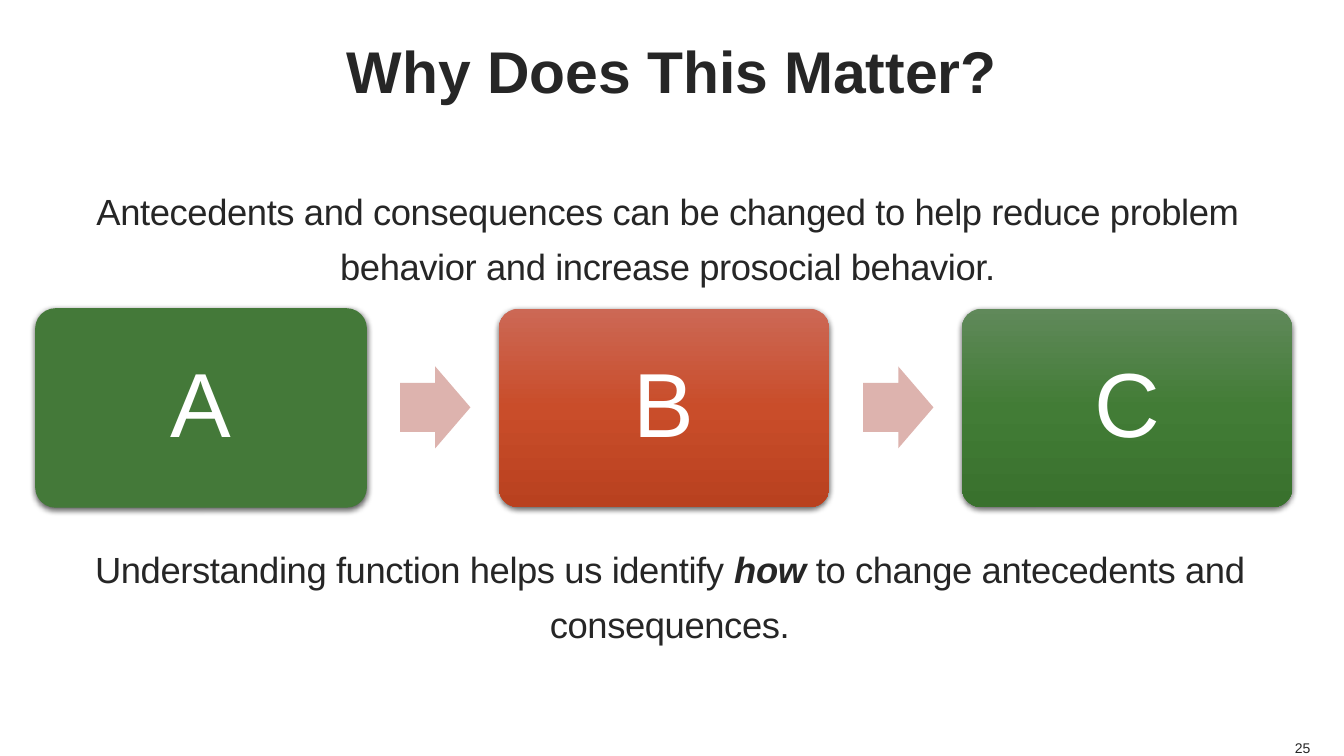
from lxml.etree import SubElement
from pptx import Presentation
from pptx.dml.color import RGBColor
from pptx.enum.dml import MSO_FILL
from pptx.enum.shapes import MSO_SHAPE
from pptx.enum.text import MSO_ANCHOR, MSO_AUTO_SIZE, PP_ALIGN
from pptx.oxml.ns import qn
from pptx.util import Emu, Pt

PX = 9525  # EMU per px, 96 px to the inch

THEME = {
    "font": "Arial",
    "ink": "262626",
    "white": "FFFFFF",
    "arrow": "DDB3AE",
    "shadow": "000000",
    "title": 42,
    "body": 26,
    "letter": 65,
    "number": 10,
}
CARDS = [
    ("A", ["447939"]),
    ("B", ["CC6855", "C94D2A", "B9411F"]),
    ("C", ["60895A", "427C36", "39712D"]),
]
CARD_LEFT, CARD_TOP, CARD_W, CARD_H, PITCH = 34, 294, 315, 189, 441
ARROW_W, ARROW_H = 67, 78


def box(left, top, width, height):
    """Turn a place in px into EMU."""
    return [Emu(v * PX) for v in (left, top, width, height)]


def format_text(shape, size, color="ink", align=PP_ALIGN.CENTER,
                anchor=MSO_ANCHOR.TOP, spacing=None, wrap=True):
    tf = shape.text_frame
    tf.word_wrap = wrap
    tf.auto_size = MSO_AUTO_SIZE.NONE
    tf.vertical_anchor = anchor
    tf.margin_left = tf.margin_top = tf.margin_right = tf.margin_bottom = 0
    p = tf.paragraphs[0]
    p.alignment = align
    p.line_spacing = spacing
    p.space_before = Pt(0)
    for r in p.runs:
        r.font.name = THEME["font"]
        r.font.size = Pt(THEME[size])
        r.font.color.rgb = RGBColor.from_string(THEME[color])
        if size == "body":
            r.font._element.set("spc", "-30")


prs = Presentation()
prs.slide_width, prs.slide_height = Emu(1280 * PX), Emu(720 * PX)
s = prs.slides.add_slide(prs.slide_layouts[1])

# Title
title = s.shapes.title
title.left, title.top, title.width, title.height = box(0, 0, 1280, 134)
title.text_frame.text = "Why Does This Matter?"
format_text(title, "title", anchor=MSO_ANCHOR.MIDDLE)
title.text_frame.paragraphs[0].runs[0].font.bold = True

# Statement above the cards
body = s.placeholders[1]
body.left, body.top, body.width, body.height = box(34, 170, 1204, 125)
body.text_frame.text = ("Antecedents and consequences can be changed to help reduce "
                        "problem behavior and increase prosocial behavior.")
pPr = body.text_frame.paragraphs[0]._p.get_or_add_pPr()
pPr.set("marL", "0")
pPr.set("indent", "0")
SubElement(pPr, qn("a:buNone"))
format_text(body, "body", spacing=1.25)

# Cards
for i, (letter, colors) in enumerate(CARDS):
    left = CARD_LEFT + i * PITCH
    card = s.shapes.add_shape(MSO_SHAPE.ROUNDED_RECTANGLE,
                              *box(left, CARD_TOP, CARD_W, CARD_H))
    card.adjustments[0] = 0.1
    if len(colors) == 1:
        card.fill.solid()
        card.fill.fore_color.rgb = RGBColor.from_string(colors[0])
        card.line.color.rgb = RGBColor.from_string(colors[0])
        card.line.width = Pt(0.75)
    else:
        card.fill.gradient()
        card.fill.gradient_angle = 270
        stops = card._element.spPr.find(".//" + qn("a:gsLst"))
        for stop in list(stops):
            stops.remove(stop)
        for k, color in enumerate(colors):
            stop = SubElement(stops, qn("a:gs"), pos=str(k * 50000))
            SubElement(stop, qn("a:srgbClr"), val=color)
        card.line.fill.background()
    card.shadow.inherit = False
    effects = card._element.spPr.find(qn("a:effectLst"))
    shadow = SubElement(effects, qn("a:outerShdw"), blurRad=str(Pt(4.5)),
                        dist=str(Pt(1.5)), dir="5400000", rotWithShape="0")
    shade = SubElement(shadow, qn("a:srgbClr"), val=THEME["shadow"])
    SubElement(shade, qn("a:alpha"), val="63000")
    card.text_frame.text = letter
    format_text(card, "letter", "white", anchor=MSO_ANCHOR.MIDDLE, spacing=0.9)

# Arrows between the cards
for i in range(len(CARDS) - 1):
    left = CARD_LEFT + i * PITCH + CARD_W + 32
    top = CARD_TOP + (CARD_H - ARROW_H) // 2
    arrow = s.shapes.add_shape(MSO_SHAPE.RIGHT_ARROW, *box(left, top, ARROW_W, ARROW_H))
    arrow.adjustments[0], arrow.adjustments[1] = 0.6, 0.5
    arrow.fill.solid()
    arrow.fill.fore_color.rgb = RGBColor.from_string(THEME["arrow"])
    arrow.line.fill.background()
    arrow.shadow.inherit = False

# Slide number
number = s.shapes.add_textbox(*box(1232, 704, 16, 16))
number.text_frame.text = "25"
format_text(number, "number", align=PP_ALIGN.RIGHT, anchor=MSO_ANCHOR.BOTTOM, wrap=False)

# Conclusion below the cards
conclusion = s.shapes.add_textbox(*box(36, 511, 1204, 125))
p = conclusion.text_frame.paragraphs[0]
for words in ("Understanding function helps us identify ", "how",
              " to change antecedents and consequences."):
    r = p.add_run()
    r.text = words
    r.font.bold = r.font.italic = words == "how"
format_text(conclusion, "body", spacing=1.25)

prs.save("out.pptx")
